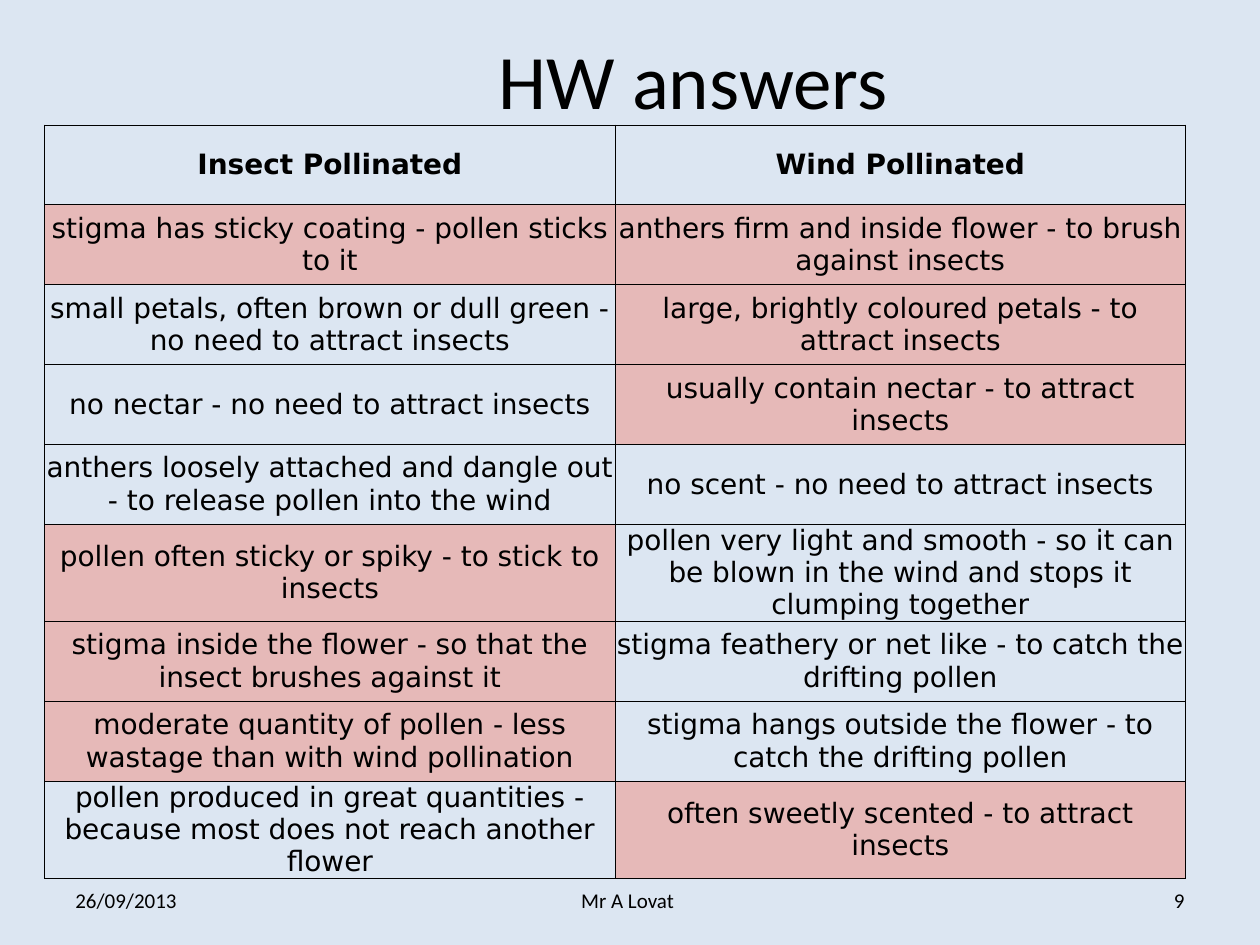
from lxml import etree
from pptx import Presentation
from pptx.dml.color import RGBColor
from pptx.enum import text
from pptx.oxml import ns
from pptx.util import Cm, Pt

PALE_BLUE = RGBColor(0xDC, 0xE6, 0xF2)
PINK = RGBColor(0xE6, 0xB9, 0xB8)
BLACK = RGBColor(0, 0, 0)
PLAIN_TABLE = "{2D5ABB26-0587-4C30-8999-92F81FD0307C}"
LEFT, CENTER, RIGHT = text.PP_ALIGN.LEFT, text.PP_ALIGN.CENTER, text.PP_ALIGN.RIGHT

HEADINGS = ["Insect Pollinated", "Wind Pollinated"]
INSECT_TRAITS = [
    "stigma has sticky coating - pollen sticks to it",
    "anthers firm and inside flower - to brush against insects",
    "large, brightly coloured petals - to attract insects",
    "usually contain nectar - to attract insects",
    "pollen often sticky or spiky - to stick to insects",
    "stigma inside the flower - so that the insect brushes against it",
    "moderate quantity of pollen - less wastage than with wind pollination",
    "often sweetly scented - to attract insects",
]
WIND_TRAITS = [
    "small petals, often brown or dull green - no need to attract insects",
    "no nectar - no need to attract insects",
    "anthers loosely attached and dangle out - to release pollen into the wind",
    "no scent - no need to attract insects",
    "pollen very light and smooth - so it can be blown in the wind and stops it clumping together",
    "stigma feathery or net like - to catch the drifting pollen",
    "stigma hangs outside the flower - to catch the drifting pollen",
    "pollen produced in great quantities - because most does not reach another flower",
]
ANSWERS = [
    (INSECT_TRAITS[0], INSECT_TRAITS[1]),
    (WIND_TRAITS[0], INSECT_TRAITS[2]),
    (WIND_TRAITS[1], INSECT_TRAITS[3]),
    (WIND_TRAITS[2], WIND_TRAITS[3]),
    (INSECT_TRAITS[4], WIND_TRAITS[4]),
    (INSECT_TRAITS[5], WIND_TRAITS[5]),
    (INSECT_TRAITS[6], WIND_TRAITS[6]),
    (WIND_TRAITS[7], INSECT_TRAITS[7]),
]


class AnswerSlide:
    title_format = {"name": "Calibri", "size": Pt(44), "bold": False}
    heading_format = {"name": "DejaVu Sans", "size": Pt(16), "bold": True}
    answer_format = {**heading_format, "bold": False}
    footer_format = {"name": "Calibri", "size": Pt(12), "bold": False}

    def __init__(self, deck):
        self.slide = deck.slides.add_slide(deck.slide_layouts[5])
        fill = self.slide.background.fill
        fill.solid()
        fill.fore_color.rgb = PALE_BLUE

    def wording(self, frame, words, style, align):
        frame.word_wrap = True
        paragraph = frame.paragraphs[0]
        paragraph.alignment = align
        run = paragraph.add_run()
        run.text = words
        for attribute, value in style.items():
            setattr(run.font, attribute, value)
        run.font.color.rgb = BLACK

    def title(self, words, **place):
        heading = self.slide.shapes.title
        for side, length in place.items():
            setattr(heading, side, length)
        heading.text_frame.vertical_anchor = text.MSO_ANCHOR.MIDDLE
        self.wording(heading.text_frame, words, self.title_format, CENTER)

    def border(self, cell):
        properties = cell._tc.get_or_add_tcPr()
        for edge in ("lnL", "lnR", "lnT", "lnB"):
            line = etree.SubElement(properties, ns.qn(f"a:{edge}"), w=str(Pt(0.5)))
            paint = etree.SubElement(line, ns.qn("a:solidFill"))
            etree.SubElement(paint, ns.qn("a:srgbClr"), val=str(BLACK))

    def cell(self, cell, words, style):
        for side in ("left", "right", "top", "bottom"):
            setattr(cell, f"margin_{side}", 0)
        cell.vertical_anchor = text.MSO_ANCHOR.MIDDLE
        self.border(cell)
        if words in INSECT_TRAITS:
            cell.fill.solid()
            cell.fill.fore_color.rgb = PINK
        else:
            cell.fill.background()
        self.wording(cell.text_frame, words, style, CENTER)

    def table(self, headings, answers, left, top, width, row_height):
        rows = [headings, *answers]
        grid = self.slide.shapes.add_table(
            len(rows), len(headings), left, top, width, row_height * len(rows)
        ).table
        grid.first_row = grid.horz_banding = False
        grid._tbl.tblPr.find(ns.qn("a:tableStyleId")).text = PLAIN_TABLE
        for r, row in enumerate(rows):
            style = self.answer_format if r else self.heading_format
            for c, words in enumerate(row):
                self.cell(grid.cell(r, c), words, style)

    def footer(self, words, left, width, align):
        box = self.slide.shapes.add_textbox(left, Cm(17.65), width, Cm(1.01))
        box.text_frame.vertical_anchor = text.MSO_ANCHOR.MIDDLE
        self.wording(box.text_frame, words, self.footer_format, align)


def main():
    deck = Presentation()
    deck.slide_width, deck.slide_height = Cm(25.4), Cm(19.05)
    homework = AnswerSlide(deck)
    homework.title("HW answers", left=Cm(2.54), top=Cm(0), width=Cm(22.86), height=Cm(3.18))
    homework.table(HEADINGS, ANSWERS, Cm(0.9), Cm(2.52), Cm(23), Cm(1.61))
    homework.footer("26/09/2013", Cm(1.27), Cm(5.93), LEFT)
    homework.footer("Mr A Lovat ", Cm(8.68), Cm(8.04), CENTER)
    homework.footer("9", Cm(18.2), Cm(5.93), RIGHT)
    deck.save("out.pptx")


if __name__ == "__main__":
    main()
